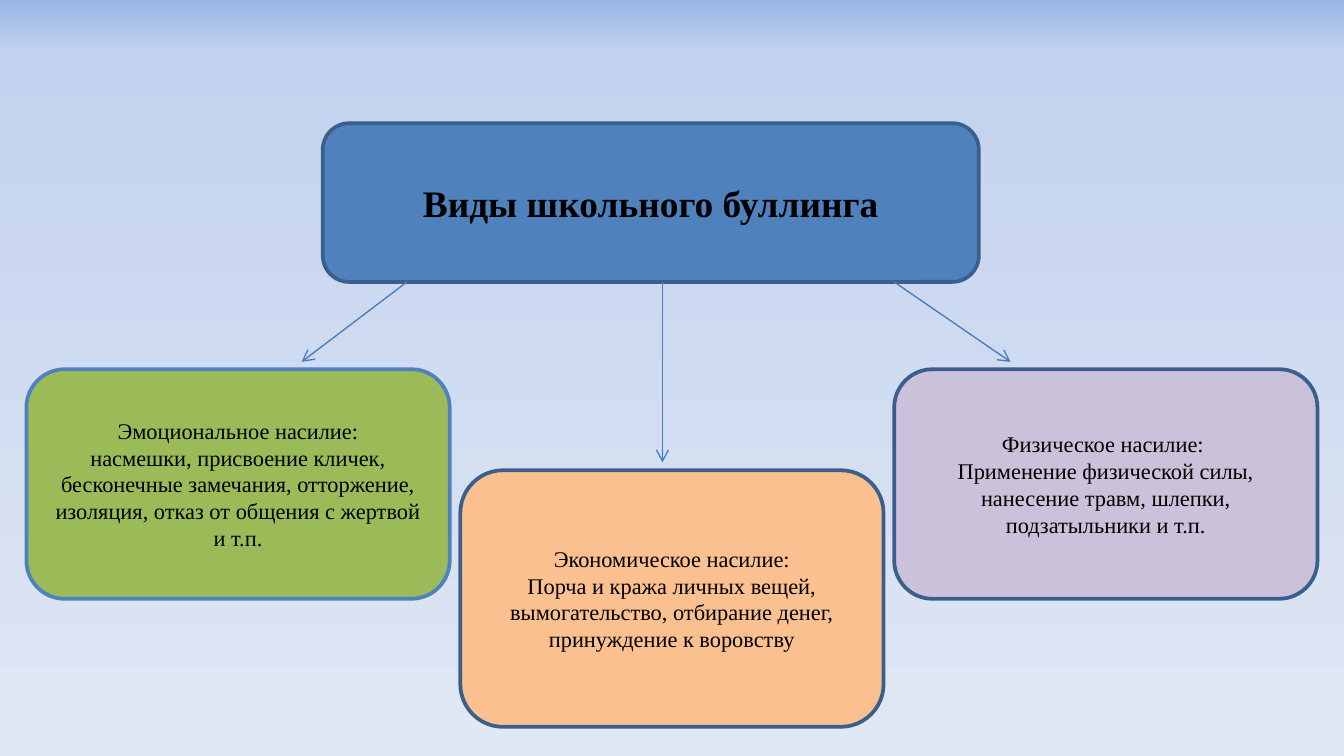
from copy import deepcopy
from pptx import Presentation
from pptx import util as u
from pptx.dml.color import RGBColor
from pptx.enum import shapes, text
from pptx.oxml import ns, xmlchemy as xc

BLACK = RGBColor(0x00, 0x00, 0x00)
BLUE = RGBColor(0x4F, 0x81, 0xBD)
NAVY = RGBColor(0x3A, 0x5F, 0x8C)
STEEL = RGBColor(0x4B, 0x7E, 0xBC)
GREEN = RGBColor(0x9B, 0xBB, 0x59)
LILAC = RGBColor(0xCC, 0xC1, 0xDA)
PEACH = RGBColor(0xFA, 0xC0, 0x90)
SKY = [
    (0, RGBColor(0x9A, 0xB5, 0xE4)),
    (0.07, RGBColor(0xC2, 0xD1, 0xED)),
    (1, RGBColor(0xE1, 0xE8, 0xF5)),
]

deck = Presentation()
deck.slide_width = u.Cm(25.4)
deck.slide_height = u.Cm(14.29)
slide = deck.slides.add_slide(deck.slide_layouts[6])

back = slide.background.fill
back.gradient()
back.gradient_angle = 270
first = slide.element.find(".//" + ns.qn("a:gs"))
first.addnext(deepcopy(first))
for stop, (place, shade) in zip(back.gradient_stops, SKY):
    stop.position = place
    stop.color.rgb = shade


def write(frame, lines, size=12, bold=False, color=BLACK, font="Times New Roman"):
    frame.word_wrap = True
    frame.vertical_anchor = text.MSO_ANCHOR.MIDDLE
    for i, line in enumerate(lines):
        par = frame.add_paragraph() if i else frame.paragraphs[0]
        par.alignment = text.PP_ALIGN.CENTER
        run = par.add_run()
        run.text = line
        run.font.name = font
        run.font.size = u.Pt(size)
        run.font.bold = bold
        run.font.color.rgb = color


boxes = [
    (6.1, 2.33, 12.4, 3, BLUE, NAVY, ["Виды школьного буллинга"], dict(size=20, bold=True)),
    (0.5, 6.98, 8, 4.34, GREEN, BLUE, [
        "Эмоциональное насилие:",
        "насмешки, присвоение кличек, бесконечные замечания, отторжение, "
        "изоляция, отказ от общения с жертвой и т.п.",
    ], {}),
    (16.9, 6.98, 8, 4.34, LILAC, NAVY, [
        "Физическое насилие: ",
        "Применение физической силы, нанесение травм, шлепки, подзатыльники и т.п.",
    ], {}),
    (8.7, 8.89, 8, 4.85, PEACH, NAVY, [
        "Экономическое насилие:",
        "Порча и кража личных вещей, вымогательство, отбирание денег, "
        "принуждение к воровству",
    ], {}),
]
for left, top, width, height, fill, edge, lines, style in boxes:
    box = slide.shapes.add_shape(
        shapes.MSO_SHAPE.ROUNDED_RECTANGLE,
        u.Cm(left), u.Cm(top), u.Cm(width), u.Cm(height))
    box.shadow.inherit = False
    box.fill.solid()
    box.fill.fore_color.rgb = fill
    box.line.color.rgb = edge
    box.line.width = u.Pt(2)
    write(box.text_frame, lines, **style)

for start, end, base in [(7.69, 5.7, 6.84), (16.9, 19.1, 6.84), (12.52, 12.52, 8.74)]:
    arrow = slide.shapes.add_connector(
        shapes.MSO_CONNECTOR.STRAIGHT,
        u.Cm(start), u.Cm(5.33), u.Cm(end), u.Cm(base))
    arrow.line.color.rgb = STEEL
    arrow.line.width = u.Pt(0.75)
    tail = xc.OxmlElement("a:tailEnd")
    tail.set("type", "arrow")
    arrow.line._get_or_add_ln().append(tail)
    arrow._element.spPr.append(xc.OxmlElement("a:effectLst"))

deck.save("out.pptx")
